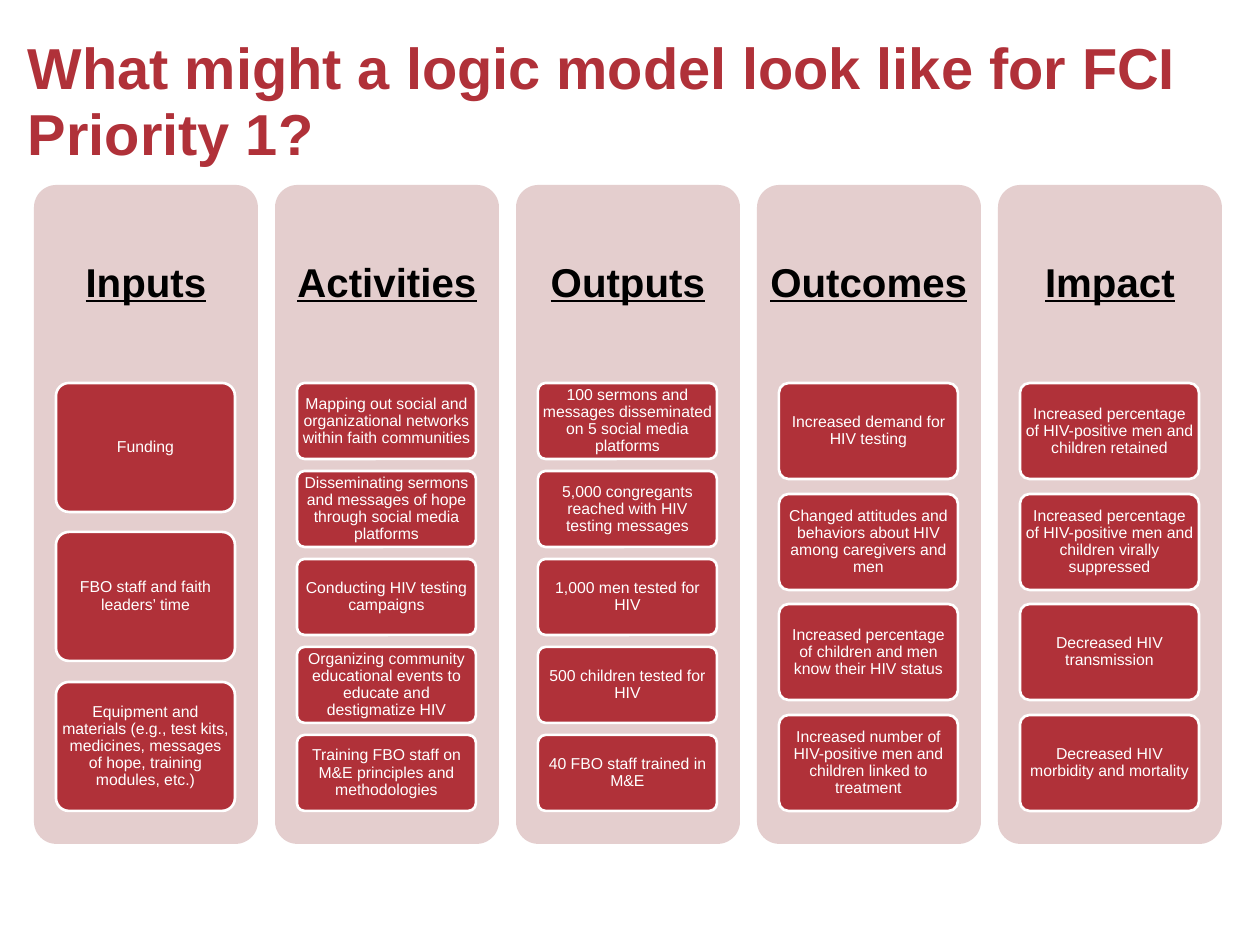
import pptx
import pptx.util
import pptx.dml.color
import pptx.enum.shapes
import pptx.enum.text

SCALE = 914400 // 126
RED, PINK, WHITE, BLACK = "B03139", "E4CECE", "FFFFFF", "000000"
LEFT, PITCH, WIDTH = 34, 241, 224
TOP, HEIGHT = 185, 659
CARD_TOP, CARD_WIDTH, STACK = 383, 179, 428
GAP_RATIO = 0.154  # gap between cards, as a share of card height

COLUMNS = {
    "Inputs": [
        "Funding",
        "FBO staff and faith leaders’ time",
        "Equipment and materials (e.g., test kits, medicines, "
        "messages of hope, training modules, etc.)",
    ],
    "Activities": [
        "Mapping out social and organizational networks within faith communities",
        "Disseminating sermons and messages of hope through social media platforms",
        "Conducting HIV testing campaigns",
        "Organizing community educational events to educate and destigmatize HIV",
        "Training FBO staff on M&E principles and methodologies",
    ],
    "Outputs": [
        "100 sermons and messages disseminated on 5 social media platforms",
        "5,000 congregants reached with HIV testing messages",
        "1,000 men tested for HIV",
        "500 children tested for HIV",
        "40 FBO staff trained in M&E",
    ],
    "Outcomes": [
        "Increased demand for HIV testing",
        "Changed attitudes and behaviors about HIV among caregivers and men",
        "Increased percentage of children and men know their HIV status",
        "Increased number of HIV-positive men and children linked to treatment",
    ],
    "Impact": [
        "Increased percentage of HIV-positive men and children retained",
        "Increased percentage of HIV-positive men and children virally suppressed",
        "Decreased HIV transmission",
        "Decreased HIV morbidity and mortality",
    ],
}


def px(*values):
    return [round(value) * SCALE for value in values]


def color(code):
    return pptx.dml.color.RGBColor.from_string(code)


def write(shape, text, size, ink, bold=False, underline=False, center=True,
          spacing=0.9, inset=(12, 12)):
    frame = shape.text_frame
    frame.word_wrap = True
    frame.margin_left = frame.margin_right = px(inset[0])[0]
    frame.margin_top = frame.margin_bottom = px(inset[1])[0]
    anchor = pptx.enum.text.MSO_ANCHOR
    frame.vertical_anchor = anchor.MIDDLE if center else anchor.TOP
    align = pptx.enum.text.PP_ALIGN
    line = frame.paragraphs[0]
    line.alignment = align.CENTER if center else align.LEFT
    line.line_spacing = spacing
    run = line.add_run()
    run.text = text
    font = run.font
    font.name, font.size = "Arial", pptx.util.Pt(size)
    font.bold, font.underline = bold, underline
    font.color.rgb = color(ink)


def label(slide, box, text, **style):
    write(slide.shapes.add_textbox(*px(*box)), text, **style)


def panel(slide, box, fill, edge=None):
    kind = pptx.enum.shapes.MSO_SHAPE.ROUNDED_RECTANGLE
    shape = slide.shapes.add_shape(kind, *px(*box))
    shape.adjustments[0] = 0.1
    shape.shadow.inherit = False
    shape.fill.solid()
    shape.fill.fore_color.rgb = color(fill)
    if edge:
        shape.line.color.rgb = color(edge)
        shape.line.width = pptx.util.Pt(1.5)
    else:
        shape.line.fill.background()
    return shape


def column(slide, left, head, items):
    panel(slide, (left, TOP, WIDTH, HEIGHT), PINK)
    label(slide, (left, TOP, WIDTH, CARD_TOP - TOP), head,
          size=23, ink=BLACK, bold=True, underline=True)
    count = len(items)
    height = STACK / (count + (count - 1) * GAP_RATIO)
    inner = left + (WIDTH - CARD_WIDTH) // 2
    for row, item in enumerate(items):
        top = CARD_TOP + row * height * (1 + GAP_RATIO)
        card = panel(slide, (inner, top, CARD_WIDTH, height), RED, WHITE)
        write(card, item, size=9, ink=WHITE, inset=(2, 2))


def main():
    deck = pptx.Presentation()
    deck.slide_width, deck.slide_height = px(1260, 945)
    slide = deck.slides.add_slide(deck.slide_layouts[6])
    label(slide, (15, 31, 1245, 122),
          "What might a logic model look like for FCI Priority 1?",
          size=33, ink=RED, bold=True, center=False, spacing=0.95,
          inset=(13, 6))
    for index, (head, items) in enumerate(COLUMNS.items()):
        column(slide, LEFT + index * PITCH, head, items)
    deck.save("out.pptx")


if __name__ == "__main__":
    main()
